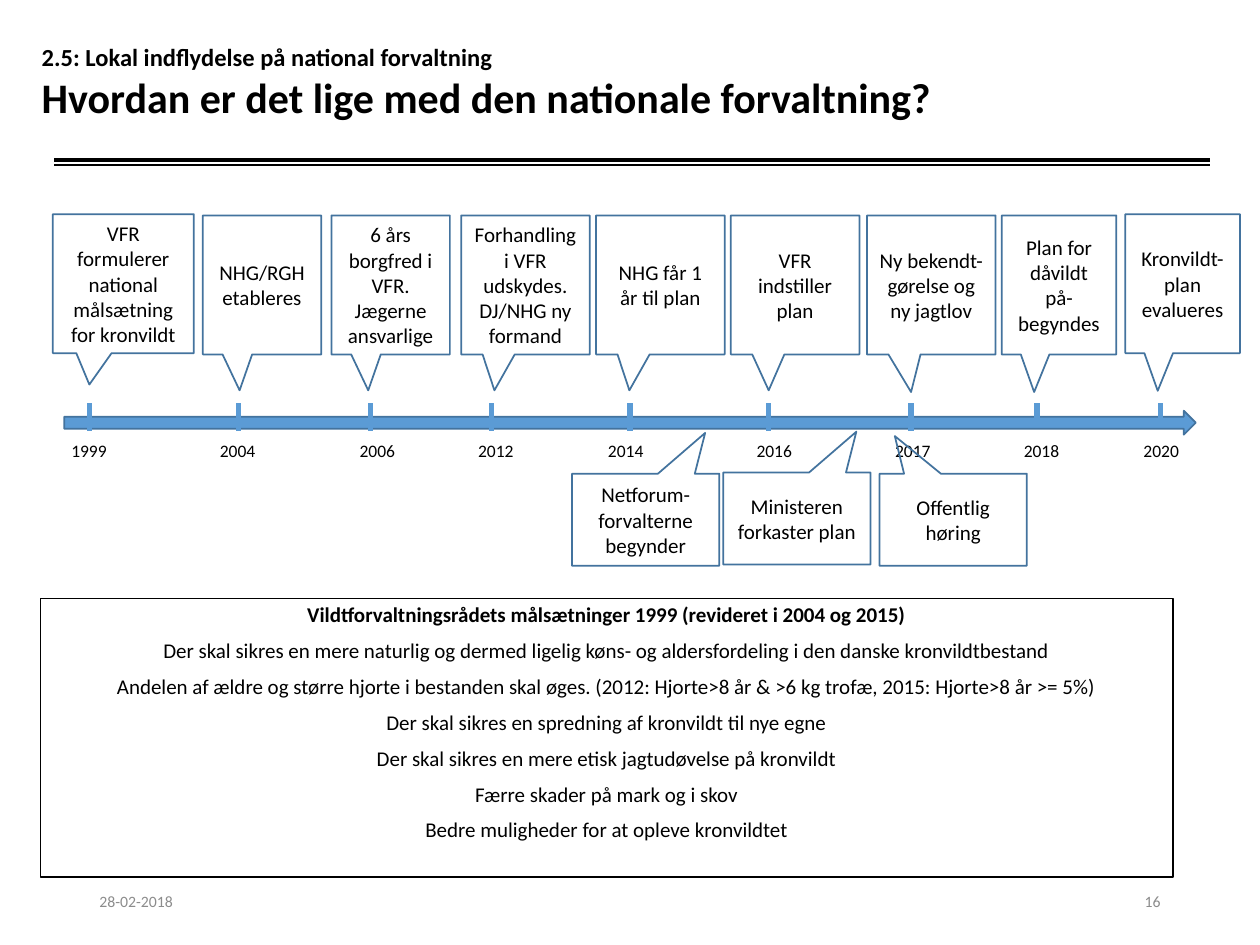
from collections import namedtuple

from lxml import etree
from pptx import Presentation
from pptx.dml.color import RGBColor
from pptx.enum.shapes import MSO_CONNECTOR, MSO_SHAPE
from pptx.enum.text import MSO_ANCHOR, MSO_AUTO_SIZE, PP_ALIGN
from pptx.oxml.ns import qn
from pptx.util import Pt

CALLOUT, ARROW = MSO_SHAPE.RECTANGULAR_CALLOUT, MSO_SHAPE.RIGHT_ARROW
STRAIGHT = MSO_CONNECTOR.STRAIGHT
LEFT, CENTER, RIGHT = PP_ALIGN.LEFT, PP_ALIGN.CENTER, PP_ALIGN.RIGHT
TOP, MIDDLE = MSO_ANCHOR.TOP, MSO_ANCHOR.MIDDLE
NO_AUTOFIT = MSO_AUTO_SIZE.NONE

BLACK = RGBColor(0x00, 0x00, 0x00)
GRAY = RGBColor(0x8C, 0x8C, 0x8C)
BLUE = RGBColor(0x5B, 0x9B, 0xD5)
DARK_BLUE = RGBColor(0x43, 0x73, 0x9E)
FONT = "Calibri"

Box = namedtuple("Box", "left top width height")
Event = namedtuple("Event", "left top width tip text year year_left tick tick_length")
Reaction = namedtuple("Reaction", "left top tip text")

# Offsets are measured from the top left corner of each region
EVENTS = [
    Event(0, 0, 80.6, (-0.241, 0.726),
          "VFR formulerer national målsætning for kronvildt", "1999", 0.8, 20.9, 15.8),
    Event(85.7, 0.7, 67.7, (-0.189, 0.759), "NHG/RGH etableres", "2004", 85.7, 105.9, 15.8),
    Event(159.2, 0.7, 67.7, (-0.189, 0.759),
          "6 års borgfred i VFR. Jægerne ansvarlige", "2006", 165.6, 181.5, 15.8),
    Event(233.3, 0.7, 73.5, (-0.241, 0.759),
          "Forhandling i VFR udskydes. DJ/NHG ny formand", "2012", 233.3, 250.6, 15.8),
    Event(310.4, 0.7, 73.5, (-0.241, 0.759), "NHG får 1 år til plan", "2014", 307.5, 329.8, 15.8),
    Event(387.4, 0.7, 73.5, (-0.205, 0.759), "VFR indstiller plan", "2016", 392.4, 409, 15.8),
    Event(465.2, 0.7, 73.5, (-0.157, 0.771),
          "Ny bekendt-gørelse og ny jagtlov", "2017", 471.6, 490.4, 15.8),
    Event(542.2, 0.7, 65.5, (-0.217, 0.771),
          "Plan for dåvildt på-begyndes", "2018", 545.1, 562.4, 11.5),
    Event(612.8, 0, 65.5, (-0.217, 0.771),
          "Kronvildt-plan evalueres", "2020", 613.5, 632.9, 11.5),
]
REACTIONS = [
    Reaction(0, 0.7, (0.404, -0.943), "Netforum-forvalterne begynder"),
    Reaction(86.4, 0, (0.404, -0.943), "Ministeren forkaster plan"),
    Reaction(175.7, 0.7, (-0.396, -0.909), "Offentlig høring"),
]
GOALS_HEADING = "Vildtforvaltningsrådets målsætninger 1999 (revideret i 2004 og 2015)"
GOALS = [
    "Der skal sikres en mere naturlig og dermed ligelig køns- og aldersfordeling "
    "i den danske kronvildtbestand",
    "Andelen af ældre og større hjorte i bestanden skal øges. "
    "(2012: Hjorte>8 år & >6 kg trofæ, 2015: Hjorte>8 år >= 5%)",
    "Der skal sikres en spredning af kronvildt til nye egne",
    "Der skal sikres en mere etisk jagtudøvelse på kronvildt",
    "Færre skader på mark og i skov",
    "Bedre muligheder for at opleve kronvildtet",
]


def place(shape, box):
    shape.left, shape.top = Pt(box.left), Pt(box.top)
    shape.width, shape.height = Pt(box.width), Pt(box.height)


def add_span(para, text, size, color=BLACK, bold=False):
    span = para.add_run()
    span.text = text
    font = span.font
    font.name, font.size, font.bold = FONT, Pt(size), bold
    font.color.rgb = color


def set_frame(shape, anchor):
    frame = shape.text_frame
    frame.word_wrap = True
    frame.auto_size = NO_AUTOFIT
    frame.vertical_anchor = anchor
    return frame


def add_label(page, box, text, size, color=BLACK, align=CENTER, anchor=TOP):
    label = page.shapes.add_textbox(*(Pt(length) for length in box))
    para = set_frame(label, anchor).paragraphs[0]
    para.alignment = align
    add_span(para, text, size, color)


def add_line(page, start, end, color, weight):
    line = page.shapes.add_connector(STRAIGHT, *(Pt(value) for value in start + end))
    line.line.color.rgb = color
    line.line.width = Pt(weight)
    properties = line._element.find(qn("p:spPr"))
    etree.SubElement(properties, qn("a:effectLst"))


def add_outlined_shape(page, kind, box):
    shape = page.shapes.add_shape(kind, *(Pt(length) for length in box))
    shape.shadow.inherit = False
    shape.line.color.rgb = DARK_BLUE
    shape.line.width = Pt(1)
    return shape


def add_callout(page, box, tip, text):
    callout = add_outlined_shape(page, CALLOUT, box)
    callout.fill.background()
    callout.adjustments[0], callout.adjustments[1] = tip
    para = set_frame(callout, MIDDLE).paragraphs[0]
    para.alignment = CENTER
    add_span(para, text, 12)


def add_heading(page, box):
    title = page.shapes.title
    place(title, box)
    para = set_frame(title, MIDDLE).paragraphs[0]
    para.alignment = LEFT
    add_span(para, "2.5: Lokal indflydelse på national forvaltning", 14, bold=True)
    para.add_line_break()
    add_span(para, "Hvordan er det lige med den nationale forvaltning?", 24, bold=True)


def add_double_rule(page, box):
    right = box.left + box.width
    for top, weight in ((box.top, 2), (box.top + box.height, 1)):
        add_line(page, (box.left, top), (right, top), BLACK, weight)


def add_timeline(page, box):
    # Time arrow
    arrow = add_outlined_shape(page, ARROW, Box(box.left + 6.5, box.top + 112.3, 646.6, 13.7))
    arrow.fill.solid()
    arrow.fill.fore_color.rgb = BLUE
    # Year, tick and callout of each event
    for event in EVENTS:
        add_label(page, Box(box.left + event.year_left, box.top + 125.3, 39.6, 19.4),
                  event.year, 10)
        tick, tick_top = box.left + event.tick, box.top + 108
        add_line(page, (tick, tick_top), (tick, tick_top + event.tick_length), BLUE, 3)
        add_callout(page, Box(box.left + event.left, box.top + event.top, event.width, 79.4),
                    event.tip, event.text)


def add_reactions(page, box):
    for reaction in REACTIONS:
        add_callout(page, Box(box.left + reaction.left, box.top + reaction.top, 84.2, box.height),
                    reaction.tip, reaction.text)


def add_goals(page, box):
    body = page.placeholders[1]
    place(body, box)
    body.line.color.rgb = BLACK
    body.line.width = Pt(0.75)
    frame = set_frame(body, TOP)
    for index, text in enumerate([GOALS_HEADING] + GOALS):
        para = frame.add_paragraph() if index else frame.paragraphs[0]
        properties = para._p.get_or_add_pPr()
        properties.set("marL", "0")
        properties.set("indent", "0")
        etree.SubElement(properties, qn("a:buNone"))
        para.alignment = CENTER
        para.line_spacing = 0.9
        para.space_before = Pt(7.5 if index else 0)
        add_span(para, text, 12, bold=index == 0)


def add_footer(page, box):
    half = 162
    add_label(page, Box(box.left, box.top, half, box.height), "28-02-2018", 9, GRAY, LEFT, MIDDLE)
    add_label(page, Box(box.left + box.width - half, box.top, half, box.height),
              "16", 9, GRAY, RIGHT, MIDDLE)


def main():
    deck = Presentation()
    deck.slide_width, deck.slide_height = Pt(720), Pt(540)
    page = deck.slides.add_slide(deck.slide_layouts[1])
    add_double_rule(page, Box(31, 91.4, 660.2, 2.9))
    add_footer(page, Box(49.7, 500.4, 620.6, 28.8))
    add_heading(page, Box(16.6, 5, 648, 84.2))
    add_timeline(page, Box(30.2, 122.4, 678.3, 144.7))
    add_reactions(page, Box(326.9, 270, 259.9, 52.6))
    add_goals(page, Box(23, 342, 647.3, 159.1))
    deck.save("out.pptx")


if __name__ == "__main__":
    main()
